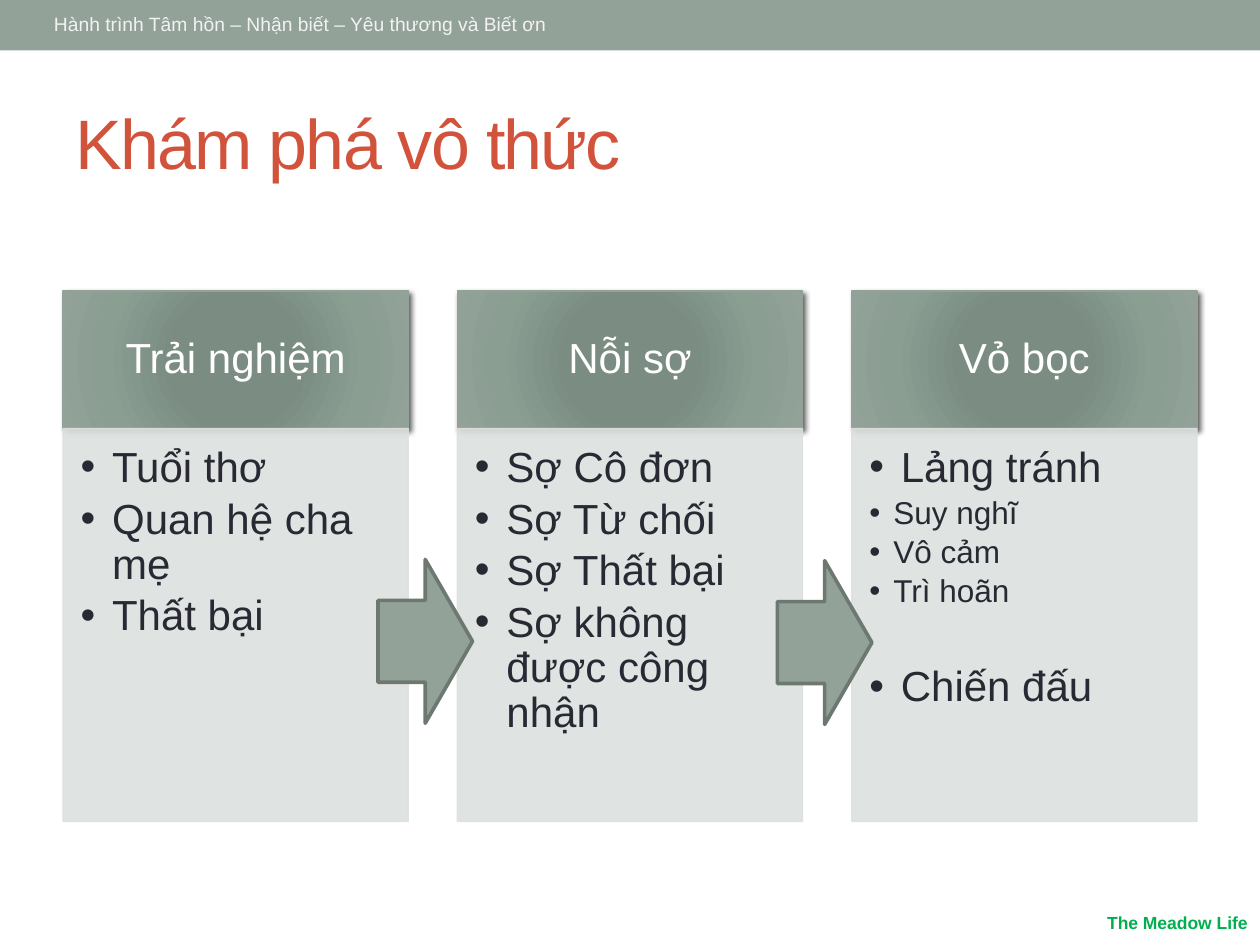
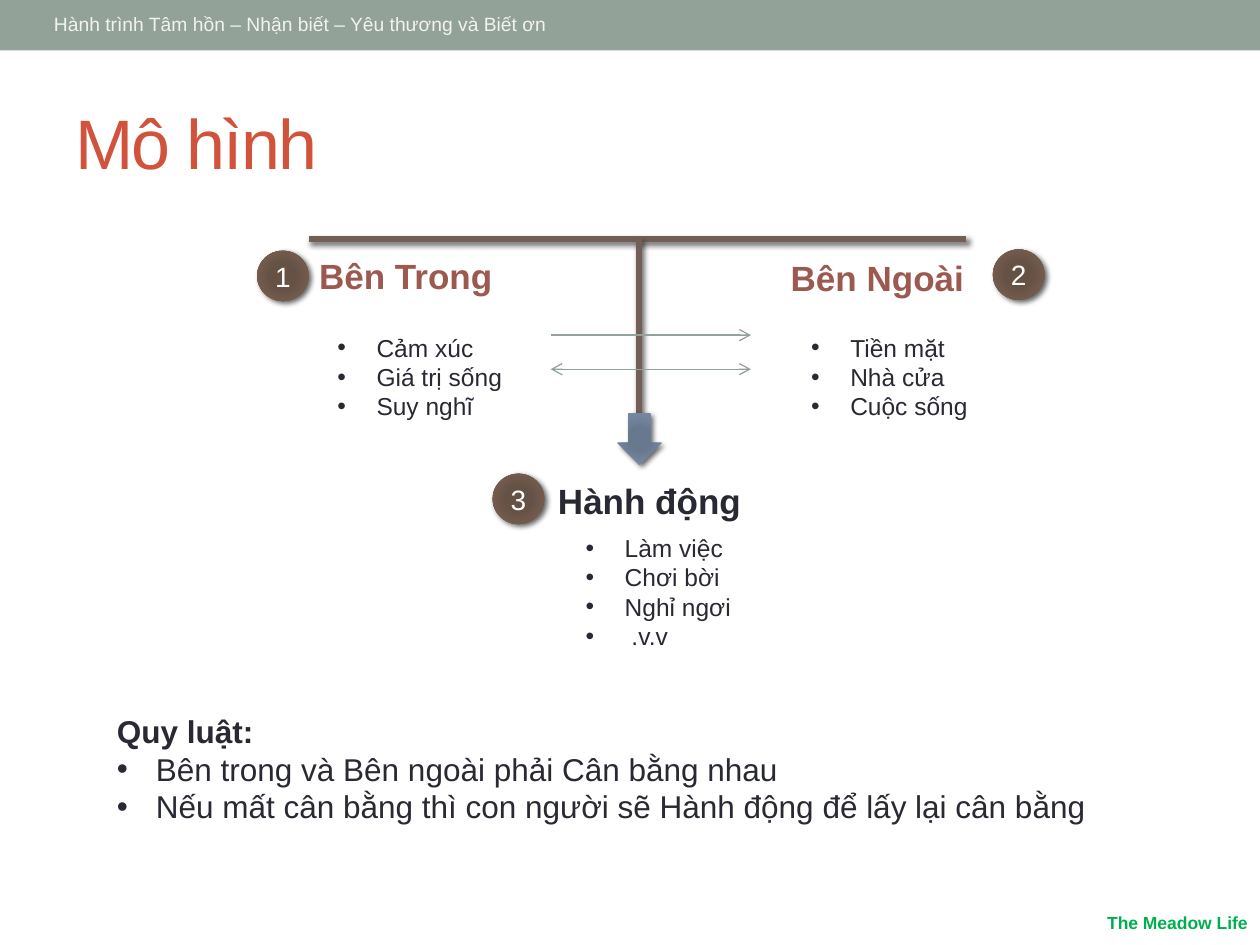
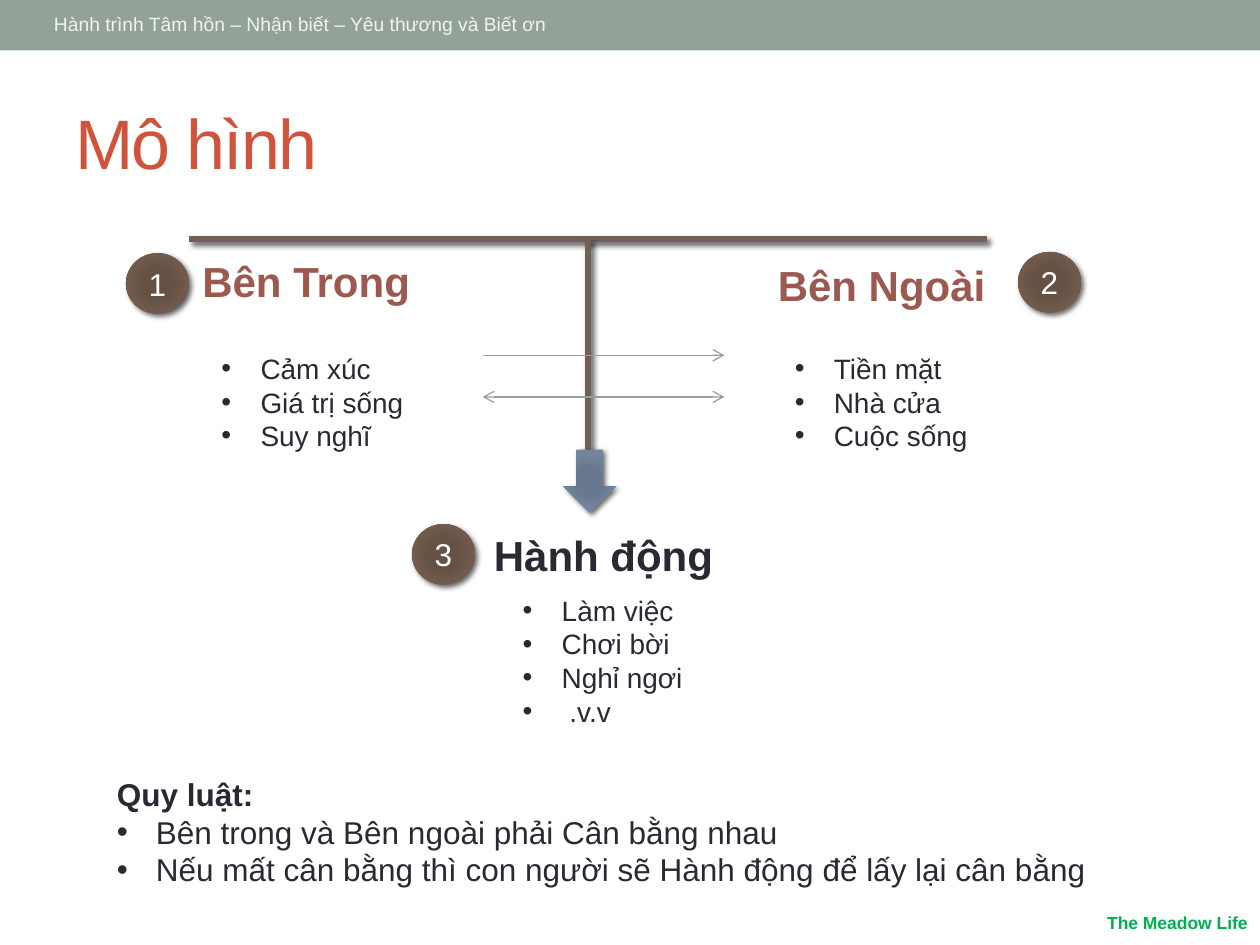
import dataclasses
import typing

import lxml.etree
import pptx
import pptx.dml.color
import pptx.enum.shapes
import pptx.enum.text
import pptx.oxml
import pptx.oxml.ns
import pptx.util

SCALE = 9144  # EMU in one px, 100 px to the inch
KIND = pptx.enum.shapes.MSO_SHAPE
ALIGN = pptx.enum.text.PP_ALIGN
ANCHOR = pptx.enum.text.MSO_ANCHOR
qn = pptx.oxml.ns.qn


@dataclasses.dataclass(frozen=True)
class Theme:
    font: str = "Arial"
    ink: str = "292934"
    white: str = "FFFFFF"
    pale: str = "F2F2F2"
    red: str = "D2533C"
    green: str = "00B050"
    sage: str = "93A299"
    edge: str = "6D7871"
    mist: str = "DCE0DE"
    brown: str = "726056"
    rust: str = "9C5950"
    sage_glow: tuple[str, ...] = ("7B8E82", "7B8D83", "8A9E92", "93A299")
    brown_glow: tuple[str, ...] = ("685044", "665145", "725A4D", "726056")
    blue_glow: tuple[str, ...] = ("677790", "68788E", "74869F", "808DA0")
    stops: tuple[int, ...] = (0, 34, 70, 100)
    title: int = 40
    large: int = 24
    body: int = 18
    band: int = 11
    foot: int = 10


THEME = Theme()


class Box(typing.NamedTuple):
    left: int
    top: int
    width: int
    height: int


class Item(typing.NamedTuple):
    text: str
    size: int = THEME.large
    hang: int = 25
    before: float = 0


class Card(typing.NamedTuple):
    head: str
    items: list[Item]


class Label(typing.NamedTuple):
    text: str
    box: Box
    color: str
    pin: float  # share of the width that stays in place when scaled
    align: typing.Any


class Points(typing.NamedTuple):
    box: Box
    lines: list[str]


class Badge(typing.NamedTuple):
    text: str
    left: int
    top: int


class Model(typing.NamedTuple):
    left: int
    ratio: float
    label: int
    points: int
    badge: int
    rule: int


CARDS = [
    Card("Trải nghiệm", [Item("Tuổi thơ"), Item("Quan hệ cha mẹ"), Item("Thất bại")]),
    Card("Nỗi sợ", [Item("Sợ Cô đơn"), Item("Sợ Từ chối"), Item("Sợ Thất bại"),
                    Item("Sợ không được công nhận")]),
    Card("Vỏ bọc", [Item("Lảng tránh"),
                    *(Item(text, THEME.body, 19) for text in ("Suy nghĩ", "Vô cảm", "Trì hoãn")),
                    Item("Chiến đấu", before=29.5)]),
]

# The model is laid out at full size; a smaller one is scaled from its top left corner.
LEFT, TOP, LABEL, POINTS = 150, 190, 24, 16
LABELS = [
    Label("Bên Trong", Box(150, 198, 186, 50), THEME.rust, 0.5, ALIGN.CENTER),
    Label("Bên Ngoài", Box(605, 201, 187, 50), THEME.rust, 1, ALIGN.RIGHT),
    Label("Hành động", Box(381, 415, 196, 50), THEME.ink, 0.5, ALIGN.CENTER),
]
LISTS = [
    Points(Box(166, 274, 167, 91), ["Cảm xúc", "Giá trị sống", "Suy nghĩ"]),
    Points(Box(621, 274, 159, 91), ["Tiền mặt", "Nhà cửa", "Cuộc sống"]),
    Points(Box(405, 466, 149, 118), ["Làm việc", "Chơi bời", "Nghỉ ngơi", " .v.v"]),
]
BADGES = [Badge("1", 100, 201), Badge("2", 808, 200), Badge("3", 327, 416)]
RULES = [
    "Bên trong và Bên ngoài phải Cân bằng nhau",
    "Nếu mất cân bằng thì con người sẽ Hành động để lấy lại cân bằng",
]
MODELS = [Model(245, 0.825, 20, 14, 16, 560), Model(150, 1, LABEL, POINTS, 18, 610)]


def px(size: float) -> pptx.util.Emu:
    return pptx.util.Emu(round(size) * SCALE)


def rgb(color: str) -> pptx.dml.color.RGBColor:
    return pptx.dml.color.RGBColor.from_string(color)


def shade(shape: typing.Any, cast: bool = False) -> None:
    """Replace the theme's shadow by a soft one, or by none."""
    effect = lxml.etree.SubElement(shape._element.spPr, qn("a:effectLst"))
    if cast:
        outer = lxml.etree.SubElement(effect, qn("a:outerShdw"), blurRad="38100",
                                      dist="25400", dir="2700000", rotWithShape="0")
        tint = lxml.etree.SubElement(outer, qn("a:srgbClr"), val="000000")
        lxml.etree.SubElement(tint, qn("a:alpha"), val="60000")


def glow(shape: typing.Any, colors: tuple[str, ...]) -> None:
    """Fill with a gradient that spreads in circles from the centre."""
    shape.fill.background()
    stops = "".join(f'<a:gs pos="{stop * 1000}"><a:srgbClr val="{color}"/></a:gs>'
                    for stop, color in zip(THEME.stops, colors))
    fill = pptx.oxml.parse_xml(
        f'<a:gradFill {pptx.oxml.ns.nsdecls("a")} rotWithShape="1"><a:gsLst>{stops}</a:gsLst>'
        '<a:path path="circle"><a:fillToRect l="100000" t="100000" r="100000" b="100000"/>'
        '</a:path></a:gradFill>')
    props = shape._element.spPr
    props.replace(props.find(qn("a:noFill")), fill)


def fade(shape: typing.Any, share: int) -> None:
    for tint in shape._element.spPr.iter(qn("a:srgbClr")):
        lxml.etree.SubElement(tint, qn("a:alpha"), val=str(share * 1000))


def draw(slide: typing.Any, kind: typing.Any, box: Box, fill: str | tuple[str, ...],
         line: str | None = None, width: float = 0.75, cast: bool = False) -> typing.Any:
    shape = slide.shapes.add_shape(kind, *map(px, box))
    if isinstance(fill, tuple):
        glow(shape, fill)
    else:
        shape.fill.solid()
        shape.fill.fore_color.rgb = rgb(fill)
    if line:
        shape.line.color.rgb = rgb(line)
        shape.line.width = pptx.util.Pt(width)
    else:
        shape.line.fill.background()
    shade(shape, cast)
    return shape


def link(slide: typing.Any, start: tuple[float, float], end: tuple[float, float], color: str,
         width: float, cast: bool = False, tips: tuple[str, ...] = ()) -> None:
    line = slide.shapes.add_connector(pptx.enum.shapes.MSO_CONNECTOR.STRAIGHT,
                                      *map(px, (*start, *end)))
    line.line.color.rgb = rgb(color)
    line.line.width = pptx.util.Pt(width)
    for tip in tips:
        lxml.etree.SubElement(line._element.spPr.find(qn("a:ln")), qn(f"a:{tip}"), type="arrow")
    shade(line, cast)


def setup(shape: typing.Any, pad: tuple[int, ...] = (10, 5, 10, 5),
          anchor: typing.Any = ANCHOR.TOP, wrap: bool = True) -> typing.Any:
    """Set the text frame's insets, anchor and wrapping."""
    frame = shape.text_frame
    frame.margin_left, frame.margin_top, frame.margin_right, frame.margin_bottom = map(px, pad)
    frame.vertical_anchor = anchor
    frame.word_wrap = wrap
    return frame


def panel(slide: typing.Any, box: Box, **form: typing.Any) -> typing.Any:
    return setup(slide.shapes.add_textbox(*map(px, box)), **form)


def write(frame: typing.Any, text: str, *, size: float, color: str = THEME.ink,
          bold: bool = False, align: typing.Any = ALIGN.LEFT, hang: int = 0, lead: float = 1,
          before: float = 0, after: float = 0, track: int = 0) -> None:
    """Add one paragraph; a hang gives it a bullet and a hanging indent."""
    para = frame.add_paragraph() if frame.text else frame.paragraphs[0]
    if hang:
        props = para._p.get_or_add_pPr()
        props.set("marL", str(px(hang)))
        props.set("indent", str(px(-hang)))
        lxml.etree.SubElement(props, qn("a:buFont"), typeface=THEME.font)
        lxml.etree.SubElement(props, qn("a:buChar"), char="•")
    para.alignment = align
    para.line_spacing = lead
    para.space_before = pptx.util.Pt(before)
    para.space_after = pptx.util.Pt(after)
    run = para.add_run()
    run.text = text
    run.font.name = THEME.font
    run.font.size = pptx.util.Pt(size)
    run.font.bold = bold
    run.font.color.rgb = rgb(color)
    if track:
        run._r.get_or_add_rPr().set("spc", str(track * 100))


def start(deck: typing.Any, title: str) -> typing.Any:
    """Add a slide with the band, footer and title."""
    slide = deck.slides.add_slide(deck.slide_layouts[6])
    draw(slide, KIND.RECTANGLE, Box(0, 0, 1000, 40), THEME.sage)
    write(panel(slide, Box(33, 5, 442, 29)),
          "Hành trình Tâm hồn – Nhận biết – Yêu thương và Biết ơn",
          size=THEME.band, color=THEME.pale)
    write(panel(slide, Box(850, 715, 150, 35), anchor=ANCHOR.MIDDLE), "The Meadow Life",
          size=THEME.foot, color=THEME.green, bold=True, align=ALIGN.RIGHT)
    write(panel(slide, Box(50, 58, 900, 108), anchor=ANCHOR.MIDDLE), title,
          size=THEME.title, color=THEME.red, track=-1)
    return slide


def cards(slide: typing.Any) -> None:
    width, pitch = 274, 313
    for index, card in enumerate(CARDS):
        left = 50 + index * pitch
        head = draw(slide, KIND.RECTANGLE, Box(left, 231, width, 110), THEME.sage_glow,
                    THEME.sage, cast=True)
        write(setup(head, (19, 11, 19, 11), ANCHOR.MIDDLE), card.head, size=THEME.large,
              color=THEME.white, align=ALIGN.CENTER, lead=0.9)
        body = draw(slide, KIND.RECTANGLE, Box(left, 340, width, 312), THEME.mist, THEME.mist)
        fade(body, 90)
        frame = setup(body, (14, 14, 19, 21))
        for item in card.items:
            write(frame, item.text, size=item.size, hang=item.hang, lead=0.9,
                  before=item.before, after=item.size * 0.15)
    for index in range(len(CARDS) - 1):
        draw(slide, KIND.RIGHT_ARROW, Box(300 + index * 317, 444 + index, 75, 130),
             THEME.sage, THEME.edge, 2.08)


def model(slide: typing.Any, plan: Model) -> None:
    def spot(left: float, top: float) -> tuple[int, int]:
        return (round(plan.left + (left - LEFT) * plan.ratio),
                round(TOP + (top - TOP) * plan.ratio))

    def sized(box: Box) -> Box:
        return Box(*spot(box.left, box.top), round(box.width * plan.ratio),
                   round(box.height * plan.ratio))

    def fit(box: Box, share: float, pad: int, pin: float = 0) -> Box:
        """Scale a text box by its type size, leaving insets and indent fixed."""
        width = round(pad + (box.width - pad) * share)
        left, top = spot(box.left + box.width * pin, box.top)
        return Box(round(left - width * pin), top, width, round(10 + (box.height - 10) * share))

    frame = panel(slide, Box(83, plan.rule, 796, 131), wrap=False)
    write(frame, "Quy luật:", size=THEME.body, bold=True)
    for rule in RULES:
        write(frame, rule, size=THEME.body, hang=31)

    for begin, end in (((150, 190), (783, 190)), ((467, 190), (467, 371))):
        link(slide, spot(*begin), spot(*end), THEME.brown, 3.5, cast=True)
    for top, tips in ((282, ("tailEnd",)), (315, ("headEnd", "tailEnd"))):
        link(slide, spot(383, top), spot(575, top), THEME.sage, 0.75, tips=tips)
    draw(slide, KIND.DOWN_ARROW, sized(Box(447, 357, 42, 50)), THEME.blue_glow, cast=True)

    for label in LABELS:
        box = fit(label.box, plan.label / LABEL, 20, label.pin)
        write(panel(slide, box, wrap=False), label.text, size=plan.label, color=label.color,
              bold=True, align=label.align)
    for points in LISTS:
        frame = panel(slide, fit(points.box, plan.points / POINTS, 51), wrap=False)
        for line in points.lines:
            write(frame, line, size=plan.points, hang=31)
    for badge in BADGES:
        disc = draw(slide, KIND.OVAL, sized(Box(badge.left, badge.top, 50, 48)),
                    THEME.brown_glow, cast=True)
        write(setup(disc, (0, 0, 0, 0), ANCHOR.MIDDLE), badge.text, size=plan.badge,
              color=THEME.white, align=ALIGN.CENTER)


def main() -> None:
    deck = pptx.Presentation()
    deck.slide_width, deck.slide_height = px(1000), px(750)
    cards(start(deck, "Khám phá vô thức"))
    for plan in MODELS:
        model(start(deck, "Mô hình"), plan)
    deck.save("out.pptx")


if __name__ == "__main__":
    main()
